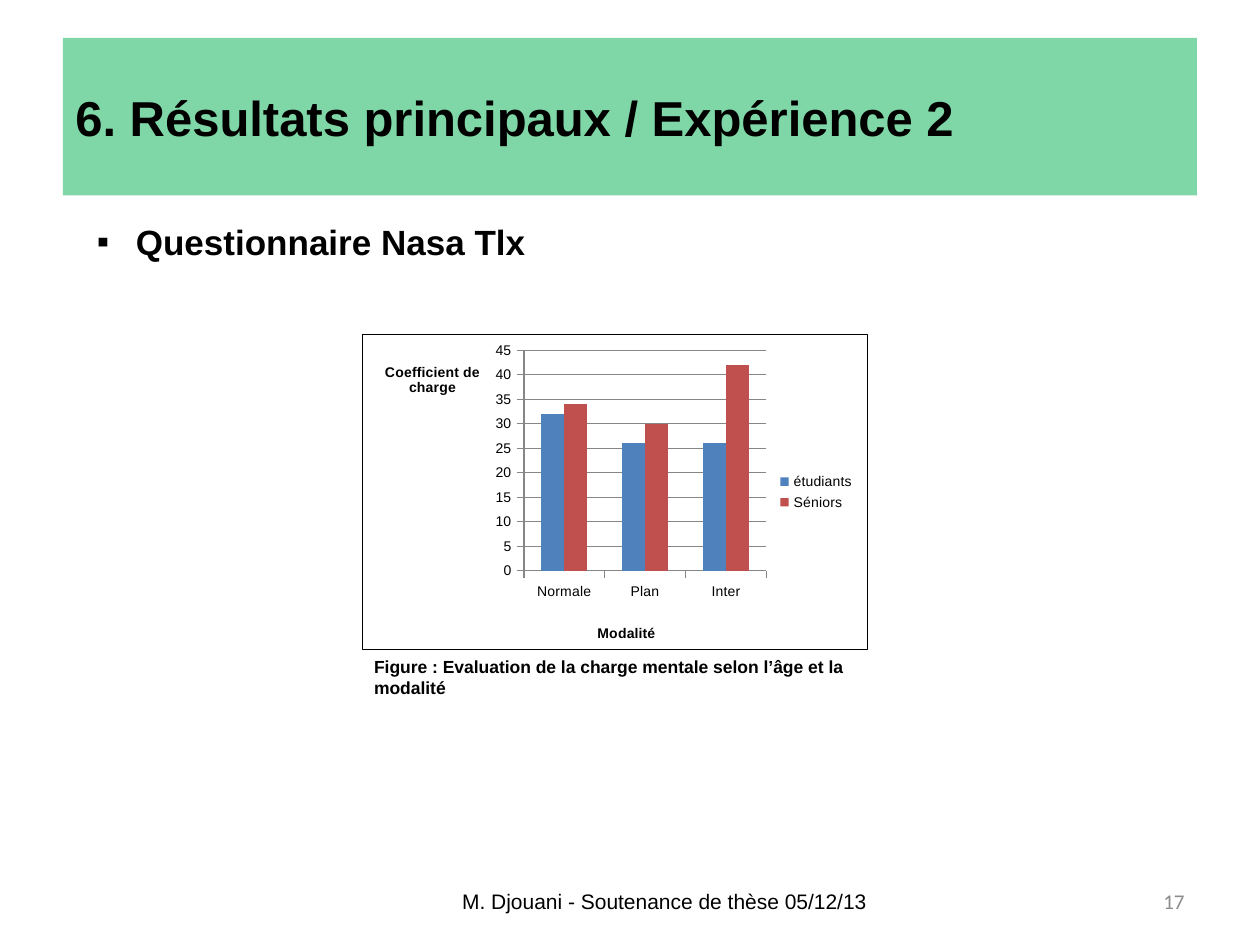
from lxml import etree
from pptx import Presentation
from pptx.chart.data import CategoryChartData
from pptx.dml.color import RGBColor
from pptx.enum.chart import XL_CHART_TYPE, XL_LEGEND_POSITION, XL_TICK_MARK
from pptx.enum.shapes import MSO_SHAPE
from pptx.enum.text import MSO_ANCHOR, PP_ALIGN
from pptx.oxml import parse_xml
from pptx.oxml.ns import nsdecls, qn
from pptx.util import Inches, Pt

COLUMN_CLUSTERED = XL_CHART_TYPE.COLUMN_CLUSTERED
LEGEND_RIGHT = XL_LEGEND_POSITION.RIGHT
TICK_OUTSIDE = XL_TICK_MARK.OUTSIDE
RECTANGLE = MSO_SHAPE.RECTANGLE
TOP, MIDDLE = MSO_ANCHOR.TOP, MSO_ANCHOR.MIDDLE
LEFT, CENTER, RIGHT = PP_ALIGN.LEFT, PP_ALIGN.CENTER, PP_ALIGN.RIGHT

COLORS = {
    "text": "000000",
    "banner": "00B050",
    "page_number": "8C8C8C",
    "axis": "868686",
    "étudiants": "4F81BD",
    "Séniors": "C0504D",
}
CATEGORIES = ["Normale", "Plan", "Inter"]
SERIES = {"étudiants": [32, 26, 26], "Séniors": [34, 30, 42]}


def color(name):
    return RGBColor.from_string(COLORS[name])


def write_text(shape, text, size, bold=False, font="Arial", text_color="text",
               align=LEFT, anchor=TOP):
    frame = shape.text_frame
    frame.word_wrap = True
    frame.vertical_anchor = anchor
    paragraph = frame.paragraphs[0]
    paragraph.alignment = align
    run = paragraph.add_run()
    run.text = text
    run.font.size = Pt(size)
    run.font.bold = bold
    run.font.name = font
    run.font.color.rgb = color(text_color)
    return paragraph


def add_text(slide, box, text, size, **style):
    shape = slide.shapes.add_textbox(*map(Inches, box))
    return write_text(shape, text, size, **style)


def add_banner(slide, box, title):
    banner = slide.shapes.add_shape(RECTANGLE, *map(Inches, box))
    banner.shadow.inherit = False
    banner.line.fill.background()
    banner.fill.solid()
    banner.fill.fore_color.rgb = color("banner")
    fill_color = banner.fill._xPr.find(qn("a:solidFill"))[0]
    etree.SubElement(fill_color, qn("a:alpha"), val="50000")
    write_text(banner, title, 28, bold=True, anchor=MIDDLE)


def add_bullet(slide, box, text):
    paragraph = add_text(slide, box, text, 20, bold=True)
    properties = paragraph._p.get_or_add_pPr()
    properties.set("marL", str(Inches(0.31)))
    properties.set("indent", str(-Inches(0.31)))
    etree.SubElement(properties, qn("a:buFont"), typeface="Arial")
    etree.SubElement(properties, qn("a:buChar"), char="▪")


def set_layout(element, index, inner=False, **fractions):
    """Place a chart part by fractions of the chart's width and height."""
    for old_layout in element.findall(qn("c:layout")):
        element.remove(old_layout)
    layout = etree.Element(qn("c:layout"))
    manual = etree.SubElement(layout, qn("c:manualLayout"))
    if inner:
        etree.SubElement(manual, qn("c:layoutTarget"), val="inner")
    for mode in ("xMode", "yMode"):
        etree.SubElement(manual, qn(f"c:{mode}"), val="edge")
    for key, value in fractions.items():
        etree.SubElement(manual, qn(f"c:{key}"), val=str(value))
    element.insert(index, layout)


def style_axis(axis, title, x, y):
    axis.major_tick_mark = TICK_OUTSIDE
    axis.format.line.color.rgb = color("axis")
    axis.format.line.width = Pt(0.75)
    frame = axis.axis_title.text_frame
    run = frame.paragraphs[0].add_run()
    run.text = title
    run.font.size = Pt(8)
    run.font.bold = True
    run.font.name = "Arial"
    run.font.color.rgb = color("text")
    body = frame._txBody.find(qn("a:bodyPr"))
    body.set("rot", "0")
    body.set("vert", "horz")
    set_layout(axis.axis_title._element, 1, x=x, y=y)


def add_workload_chart(slide, box):
    data = CategoryChartData()
    data.categories = CATEGORIES
    for name, values in SERIES.items():
        data.add_series(name, values)
    chart = slide.shapes.add_chart(COLUMN_CLUSTERED, *map(Inches, box), data).chart
    chart.has_title = False
    chart.font.size = Pt(8)
    chart.font.name = "Arial"
    chart.font.color.rgb = color("text")

    chart.has_legend = True
    chart.legend.position = LEGEND_RIGHT
    chart.legend.include_in_layout = False

    plot = chart.plots[0]
    plot.gap_width = 150
    plot.overlap = 0
    plot.vary_by_categories = False
    for series in plot.series:
        series.format.fill.solid()
        series.format.fill.fore_color.rgb = color(series.name)

    style_axis(chart.category_axis, "Modalité", 0.46, 0.91)
    style_axis(chart.value_axis, "Coefficient de charge", 0.04, 0.08)
    chart.value_axis.minimum_scale = 0
    chart.value_axis.maximum_scale = 45
    chart.value_axis.major_unit = 5
    gridlines = chart.value_axis.major_gridlines.format.line
    gridlines.color.rgb = color("axis")
    gridlines.width = Pt(0.75)

    chart_element = chart._chartSpace.find(qn("c:chart"))
    set_layout(chart_element.find(qn("c:plotArea")), 0, inner=True,
               x=0.32, y=0.05, w=0.48, h=0.7)
    chart_element.addnext(parse_xml(
        f'<c:spPr {nsdecls("c", "a")}><a:noFill/><a:ln w="{Pt(0.75)}"><a:solidFill>'
        f'<a:srgbClr val="{COLORS["text"]}"/></a:solidFill></a:ln></c:spPr>'))


def add_figure(slide, left, top, width):
    chart_height = 2.51
    add_workload_chart(slide, (left, top, width, chart_height))
    add_text(slide, (left, top + chart_height, width, 0.44),
             "Figure : Evaluation de la charge mentale selon l’âge et la modalité",
             10, bold=True)


def add_footer(slide, top, height):
    add_text(slide, (3.42, top, 3.71, height),
             "M. Djouani - Soutenance de thèse 05/12/13", 12,
             align=CENTER, anchor=MIDDLE)
    add_text(slide, (7.17, top, 2.33, height), "17", 12, font="Calibri",
             text_color="page_number", align=RIGHT, anchor=MIDDLE)


def main():
    presentation = Presentation()
    presentation.slide_width = Inches(10)
    presentation.slide_height = Inches(7.5)
    slide = presentation.slides.add_slide(presentation.slide_layouts[6])
    add_banner(slide, (0.5, 0.3, 9, 1.25), "6. Résultats principaux / Expérience 2")
    add_bullet(slide, (0.67, 1.7, 4.09, 0.77), "Questionnaire Nasa Tlx")
    add_figure(slide, 2.87, 2.65, 4.02)
    add_footer(slide, 6.95, 0.4)
    presentation.save("out.pptx")


if __name__ == "__main__":
    main()
